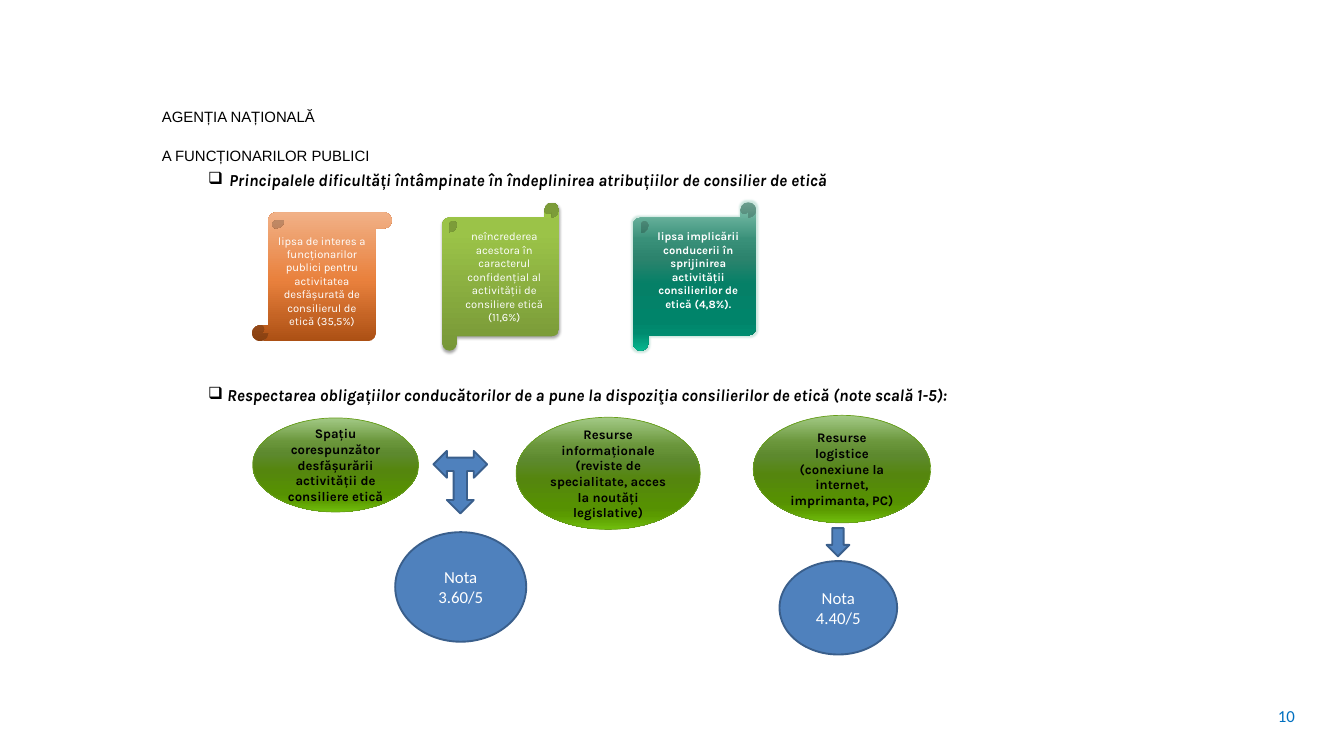
from lxml import etree
from pptx import Presentation
from pptx.dml.color import RGBColor
from pptx.enum.shapes import MSO_SHAPE
from pptx.enum.text import MSO_ANCHOR, PP_ALIGN
from pptx.oxml.ns import qn
from pptx.util import Pt

ELLIPSE = MSO_SHAPE.OVAL
CIRCLE = MSO_SHAPE.FLOWCHART_CONNECTOR
DOWN_ARROW = MSO_SHAPE.DOWN_ARROW
THREE_WAY_ARROW = MSO_SHAPE.LEFT_RIGHT_UP_ARROW
WIDE_SCROLL = MSO_SHAPE.HORIZONTAL_SCROLL
TALL_SCROLL = MSO_SHAPE.VERTICAL_SCROLL
LEFT, CENTER = PP_ALIGN.LEFT, PP_ALIGN.CENTER
TOP, MIDDLE = MSO_ANCHOR.TOP, MSO_ANCHOR.MIDDLE

COLORS = {
    "black": "000000", "white": "FFFFFF", "number": "0070C0",
    "blue": "4F81BD", "blue edge": "3A5F8C", "green edge": "689E1B",
    "glow": "86C5B1",
}
GRADIENTS = {
    "orange": {0: "AC5014", 48: "E9813D", 100: "F1B187"},
    "lime": {0: "779737", 80: "9BC348", 100: "9DC746"},
    "teal": {0: "86C5B1", 25: "399079", 38: "2C836D", 55: "058067",
             80: "00846A", 88: "008B6F", 100: "07B78F"},
    "green": {0: "A3CA86", 25: "6A963B", 38: "5D892E", 55: "55860E",
              80: "569102", 88: "5B9B00", 100: "71BF0D"},
}


def write(shape, text, size=18, font="Karla", color="black", bold=False,
          italic=False, align=LEFT, anchor=TOP, spacing=None, hang=None,
          margin=None, bottom=None):
    """Fill a shape with text, one paragraph per line; hang adds a box bullet."""
    frame = shape.text_frame
    frame.word_wrap = True
    frame.vertical_anchor = anchor
    if margin is not None:
        frame.margin_left = frame.margin_right = Pt(margin)
        frame.margin_top = frame.margin_bottom = Pt(margin)
    if bottom is not None:
        frame.margin_bottom = Pt(bottom)
    for index, line in enumerate(text.split("\n")):
        para = frame.add_paragraph() if index else frame.paragraphs[0]
        para.alignment = align
        if spacing:
            para.line_spacing = Pt(spacing)
        if hang:
            properties = para._p.get_or_add_pPr()
            properties.set("marL", str(Pt(hang)))
            properties.set("indent", str(-Pt(hang)))
            etree.SubElement(properties, qn("a:buChar")).set("char", "❑")
        span = para.add_run()
        span.text = line
        span.font.size = Pt(size)
        span.font.name = font
        span.font.bold = bold
        span.font.italic = italic
        span.font.color.rgb = RGBColor.from_string(COLORS[color])


def add_figure(kind, bounds, fill, angle=90, edge=None, width=2):
    """Add a preset shape; angle is the clockwise direction of a gradient."""
    shape = slide.shapes.add_shape(kind, *map(Pt, bounds))
    shape.shadow.inherit = False
    if fill in GRADIENTS:
        shape.fill.gradient()
        shape.fill.gradient_angle = 360 - angle
        stops = shape._element.spPr.find(qn("a:gradFill")).find(qn("a:gsLst"))
        for stop in list(stops):
            stops.remove(stop)
        for position, color in GRADIENTS[fill].items():
            stop = etree.SubElement(stops, qn("a:gs"), pos=str(position * 1000))
            etree.SubElement(stop, qn("a:srgbClr"), val=color)
    else:
        shape.fill.solid()
        shape.fill.fore_color.rgb = RGBColor.from_string(COLORS[fill])
    if edge:
        shape.line.color.rgb = RGBColor.from_string(COLORS[edge])
        shape.line.width = Pt(width)
    else:
        shape.line.fill.background()
    return shape


deck = Presentation()
deck.slide_width, deck.slide_height = Pt(1440), Pt(810)
slide = deck.slides.add_slide(deck.slide_layouts[6])

# Agency name, headings and slide number
heading = {"bold": True, "italic": True}
texts = [
    ((173.5, 92.2, 260.6, 79.2), "AGENȚIA NAȚIONALĂ\nA FUNCȚIONARILOR PUBLICI",
     {"size": 16, "font": "Arial", "spacing": 42, "margin": 0}),
    ((1362.2, 753.1, 48.2, 28.8), "10", {"font": "Calibri", "color": "number"}),
    ((216, 178.6, 765.4, 28.8),
     "Principalele dificultăți întâmpinate în îndeplinirea atribuțiilor de "
     "consilier de etică", {"hang": 22.3, **heading}),
    ((216, 409, 924.5, 28.8),
     "Respectarea obligațiilor conducătorilor de a pune la dispoziţia "
     "consilierilor de etică (note scală 1-5):", {"hang": 20.2, **heading}),
]
for bounds, text, style in texts:
    box = slide.shapes.add_textbox(*map(Pt, bounds))
    write(box, text, **style)

# Difficulties on scrolls
scrolls = [
    (WIDE_SCROLL, (473.8, 217.4, 125.3, 158.4), "lime", 270,
     "neîncrederea acestora în caracterul confidențial al activității de "
     "consiliere etică (11,6%)", {}),
    (WIDE_SCROLL, (678.2, 216.7, 131.8, 159.1), "teal", 90,
     "lipsa implicării conducerii în sprijinirea activității consilierilor "
     "de etică (4,8%).", {"bold": True, "bottom": 17.6}),
    (TALL_SCROLL, (270, 227.5, 149.8, 138.2), "orange", 270,
     "lipsa de interes a funcționarilor publici pentru activitatea "
     "desfășurată de consilierul de etică (35,5%)", {}),
]
effects = {
    "lime": ("a:outerShdw", {"blurRad": Pt(3.1), "dist": Pt(1.8),
                             "dir": 5400000, "rotWithShape": 0}, "black", 35),
    "teal": ("a:glow", {"rad": Pt(4)}, "glow", 40),
}
for kind, bounds, fill, angle, text, style in scrolls:
    scroll = add_figure(kind, bounds, fill, angle)
    write(scroll, text, size=12, color="white", align=CENTER, anchor=MIDDLE,
          **style)
    if fill in effects:
        tag, settings, color, opacity = effects[fill]
        effect = etree.SubElement(
            scroll._element.spPr.find(qn("a:effectLst")), qn(tag),
            {name: str(value) for name, value in settings.items()})
        tint = etree.SubElement(effect, qn("a:srgbClr"), val=COLORS[color])
        etree.SubElement(tint, qn("a:alpha"), val=str(opacity * 1000))

# Resources
resources = [
    ((270.7, 447.8, 177.8, 100.8),
     "Spațiu corespunzător desfășurării activității de consiliere etică"),
    ((553, 447.1, 197.3, 120.2),
     "Resurse informaționale (reviste de specialitate, acces la noutăți "
     "legislative)"),
    ((807.1, 445, 190.1, 115.2),
     "Resurse\nlogistice (conexiune la internet, imprimanta, PC)"),
]
for bounds, text in resources:
    resource = add_figure(ELLIPSE, bounds, "green", edge="green edge", width=0.75)
    write(resource, text, size=14, bold=True, align=CENTER, anchor=MIDDLE)

# Arrows leading to the scores
add_figure(DOWN_ARROW, (885.6, 565.9, 24.5, 30.2), "blue", edge="blue edge")
split_arrow = add_figure(THREE_WAY_ARROW, (464.4, 483.1, 57.6, 67), "blue",
                         edge="blue edge")
split_arrow._element.spPr.find(qn("a:xfrm")).set("flipV", "1")

scores = [
    ((423.4, 570.2, 140.4, 117.4), "Nota 3.60/5"),
    ((835.2, 601.2, 126, 100.1), "Nota 4.40/5"),
]
for bounds, text in scores:
    score = add_figure(CIRCLE, bounds, "blue", edge="blue edge")
    write(score, text, font="Calibri", color="white", align=CENTER, anchor=MIDDLE)

deck.save("out.pptx")
